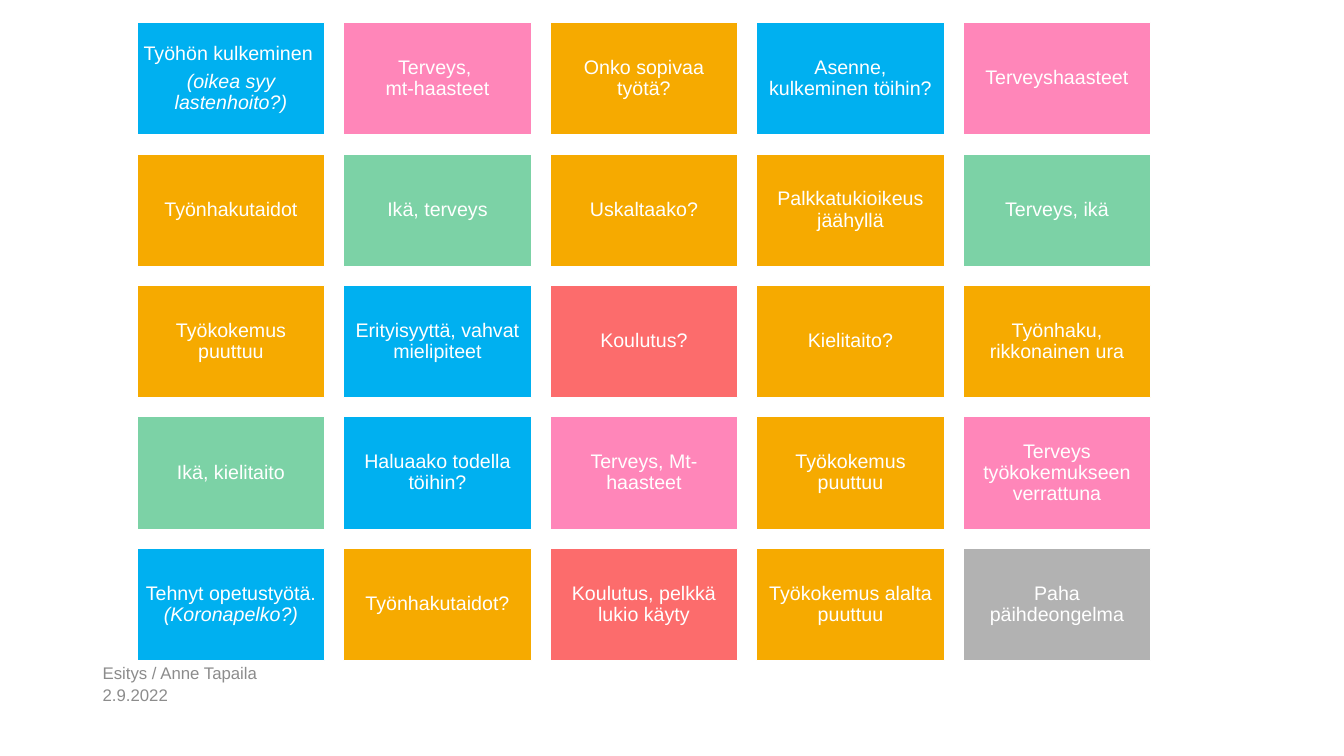
from pptx import Presentation
from pptx.dml.color import RGBColor
from pptx.enum.shapes import MSO_SHAPE
from pptx.enum.text import MSO_ANCHOR, PP_ALIGN
from pptx.util import Pt

BLUE, PINK, ORANGE = "00B0F0", "FF86B9", "F6AA00"
GREEN, RED, GREY = "7CD2A6", "FC6C6C", "B2B2B2"
WHITE, FOOTER_GREY = "FFFFFF", "8C8C8C"

OBSTACLES = [
    [("Työhön kulkeminen \n(oikea syy lastenhoito?)", BLUE),
     ("Terveys, \vmt-haasteet", PINK),
     ("Onko sopivaa työtä?", ORANGE),
     ("Asenne, kulkeminen töihin?", BLUE),
     ("Terveyshaasteet", PINK)],
    [("Työnhakutaidot", ORANGE),
     ("Ikä, terveys", GREEN),
     ("Uskaltaako?", ORANGE),
     ("Palkkatukioikeus jäähyllä", ORANGE),
     ("Terveys, ikä", GREEN)],
    [("Työkokemus puuttuu", ORANGE),
     ("Erityisyyttä, vahvat mielipiteet", BLUE),
     ("Koulutus?", RED),
     ("Kielitaito?", ORANGE),
     ("Työnhaku, rikkonainen ura", ORANGE)],
    [("Ikä, kielitaito", GREEN),
     ("Haluaako todella töihin?", BLUE),
     ("Terveys, Mt-haasteet", PINK),
     ("Työkokemus puuttuu", ORANGE),
     ("Terveys työkokemukseen verrattuna", PINK)],
    [("Tehnyt opetustyötä. (Koronapelko?)", BLUE),
     ("Työnhakutaidot?", ORANGE),
     ("Koulutus, pelkkä lukio käyty", RED),
     ("Työkokemus alalta puuttuu", ORANGE),
     ("Paha päihdeongelma", GREY)],
]


def rgb(value):
    return RGBColor.from_string(value)


def set_font(font, size, color):
    font.name = "Arial"
    font.size = Pt(size)
    font.color.rgb = rgb(color)


def add_card(s, x, y, w, h, text, color):
    sp = s.shapes.add_shape(MSO_SHAPE.RECTANGLE, Pt(x), Pt(y), Pt(w), Pt(h))
    sp.shadow.inherit = False
    sp.fill.solid()
    sp.fill.fore_color.rgb = rgb(color)
    sp.line.color.rgb = rgb(WHITE)
    sp.line.width = Pt(1)
    tf = sp.text_frame
    tf.word_wrap = True
    tf.vertical_anchor = MSO_ANCHOR.MIDDLE
    tf.margin_left = tf.margin_right = tf.margin_top = tf.margin_bottom = Pt(4.2)
    for i, line in enumerate(text.split("\n")):
        p = tf.add_paragraph() if i else tf.paragraphs[0]
        plain, bracket, remark = line.partition("(")
        p.text = plain
        if bracket:
            r = p.add_run()
            r.text = bracket + remark
            r.font.italic = True
        p.alignment = PP_ALIGN.CENTER
        p.line_spacing = 0.9
        p.space_after = Pt(5)
        set_font(p.font, 14, WHITE)


def add_card_grid(s, x, y, w, h, rows, gap):
    card_w = (w + gap) / len(rows[0]) - gap
    card_h = (h + gap) / len(rows) - gap
    for i, row in enumerate(rows):
        for j, (text, color) in enumerate(row):
            add_card(s, x + j * (card_w + gap), y + i * (card_h + gap),
                     card_w, card_h, text, color)


def add_footer(s, x, y, w, h, lines):
    line_h = h / len(lines)
    for i, line in enumerate(lines):
        sp = s.shapes.add_textbox(Pt(x), Pt(y + i * line_h), Pt(w), Pt(line_h))
        tf = sp.text_frame
        tf.word_wrap = True
        tf.vertical_anchor = MSO_ANCHOR.MIDDLE
        tf.margin_top = tf.margin_bottom = 0
        p = tf.paragraphs[0]
        p.text = line
        set_font(p.font, 12, FOOTER_GREY)


def main():
    prs = Presentation()
    prs.slide_width, prs.slide_height = Pt(960), Pt(540)
    s = prs.slides.add_slide(prs.slide_layouts[6])
    add_footer(s, 66.24, 473, 324, 31, ["Esitys / Anne Tapaila", "2.9.2022"])
    add_card_grid(s, 98, 16, 724, 456, OBSTACLES, 13.5)
    prs.save("out.pptx")


if __name__ == "__main__":
    main()
